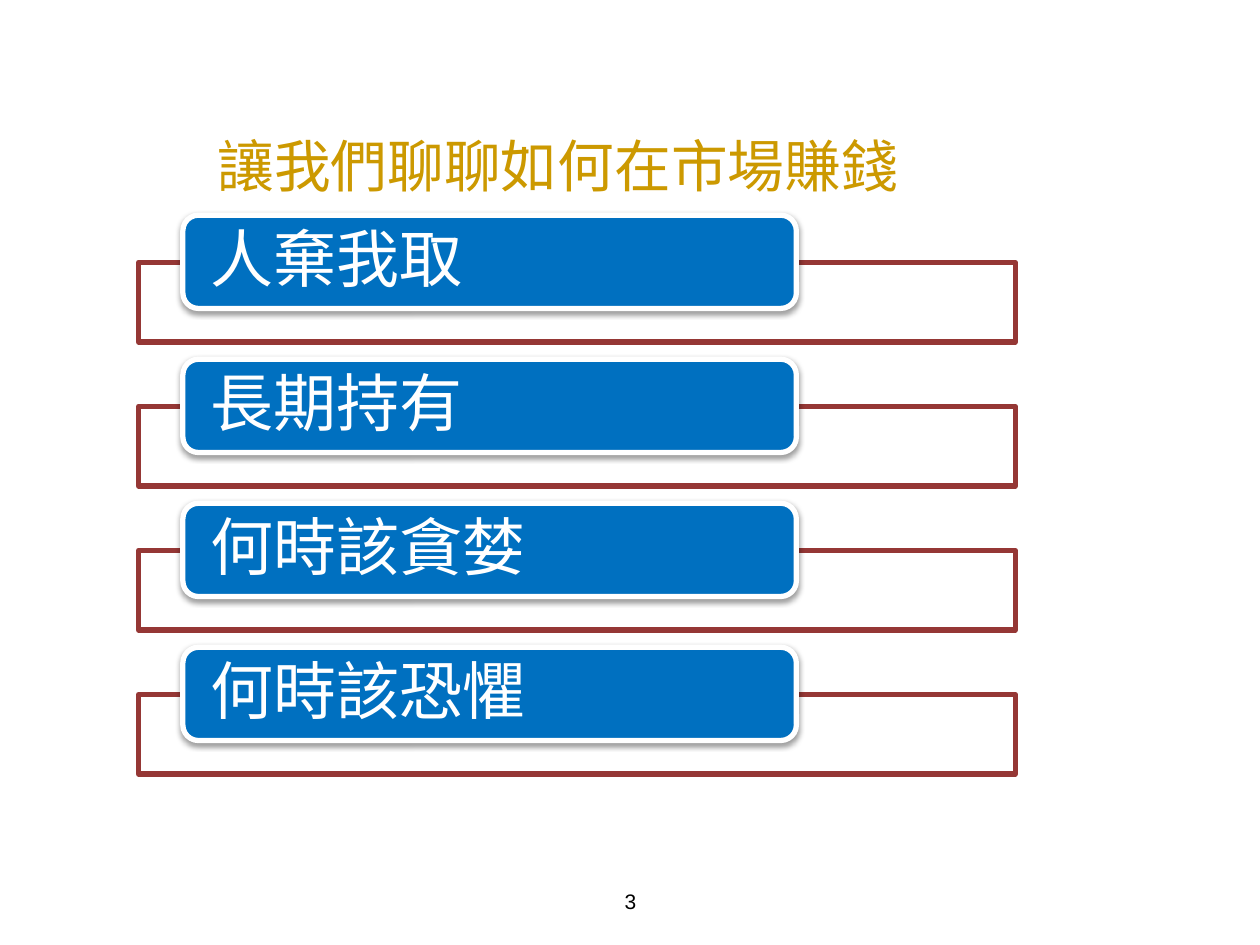
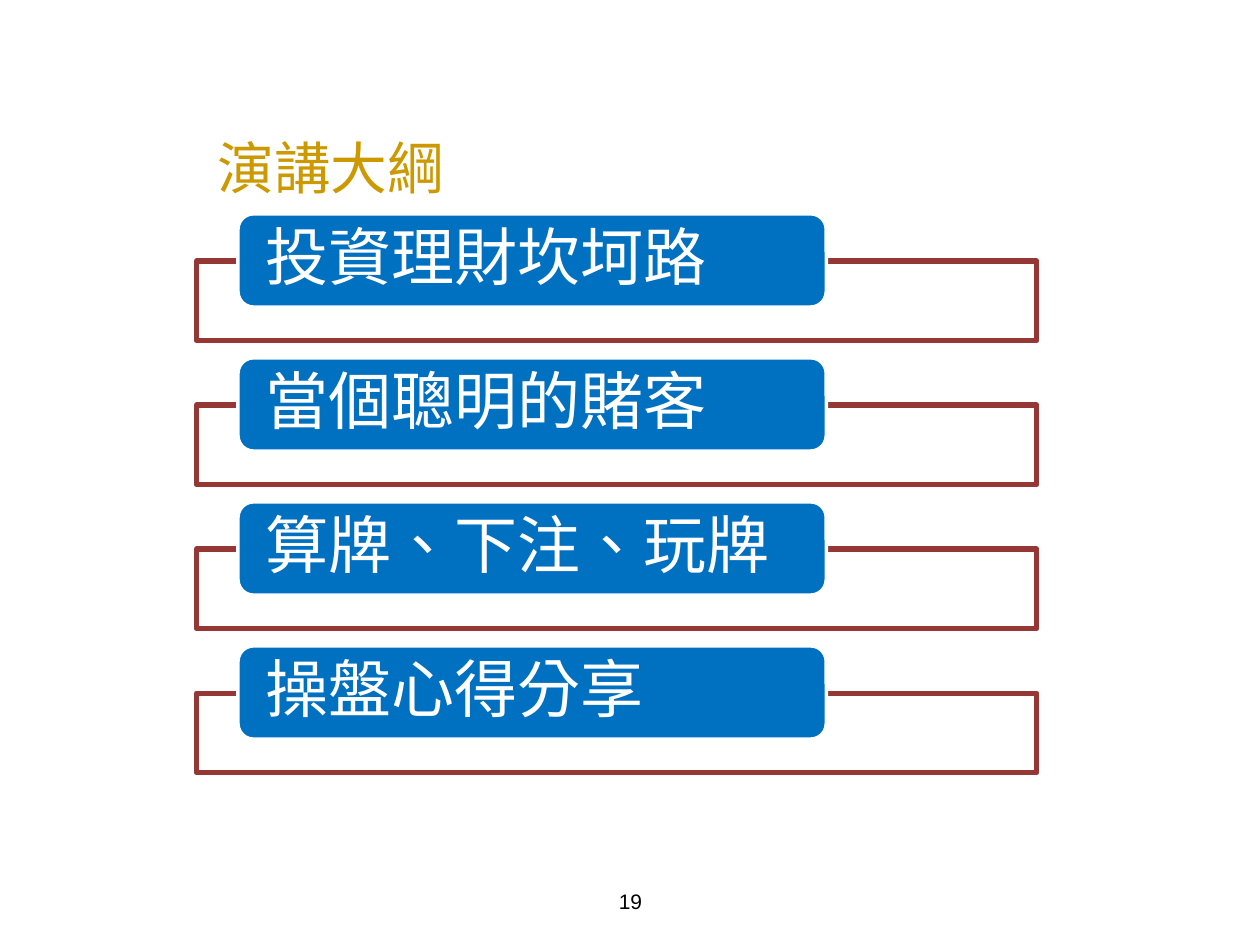
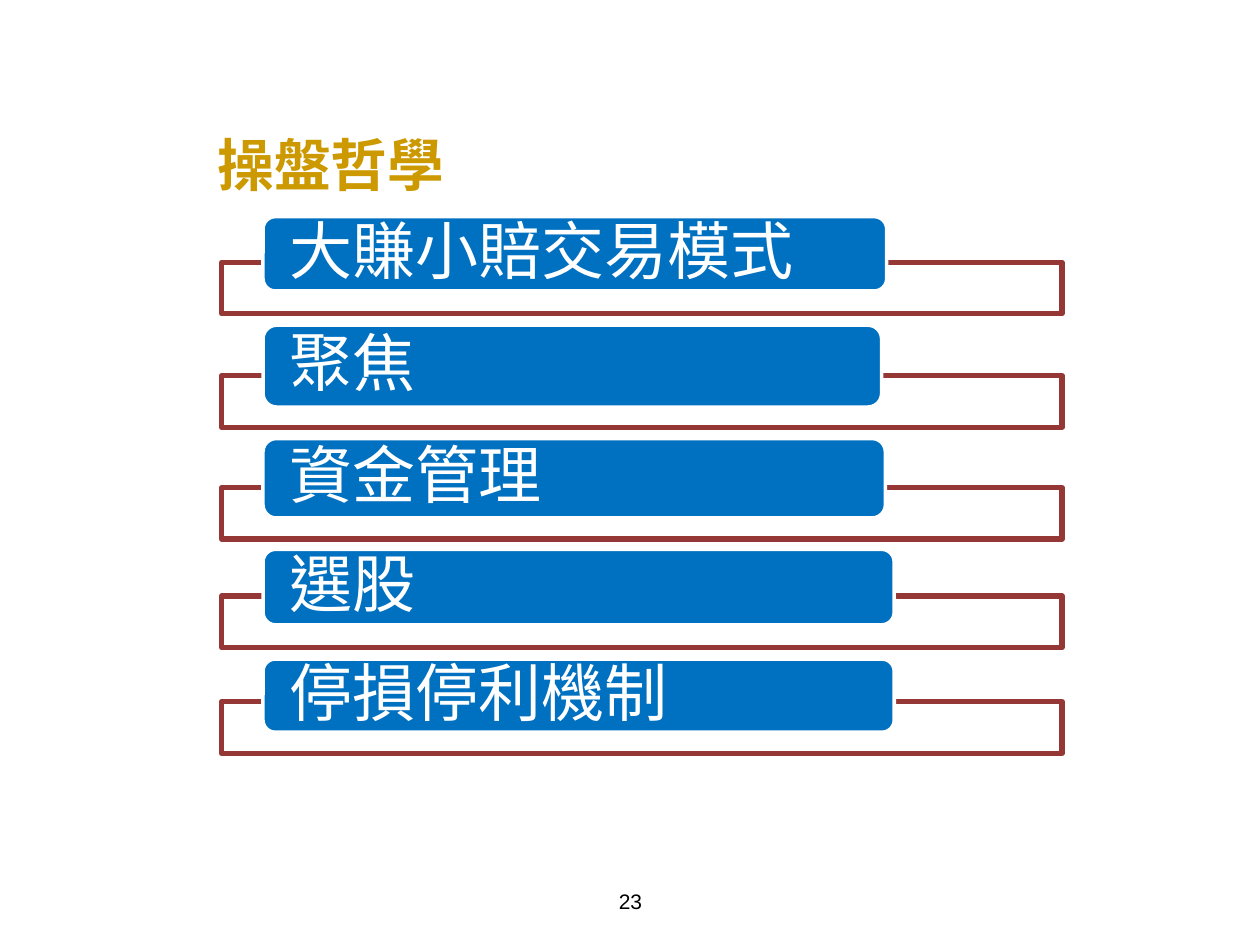
from pptx import Presentation
from pptx.dml.color import RGBColor
from pptx.enum.shapes import MSO_SHAPE
from pptx.enum.text import MSO_ANCHOR, PP_ALIGN
from pptx.oxml import parse_xml
from pptx.oxml.ns import nsdecls, qn
from pptx.util import Pt

# Shared look
GOLD, BLUE, RED, WHITE, BLACK = "CC9900", "0070C0", "953735", "FFFFFF", "000000"
CHINESE_FONT = "Noto Sans CJK SC"


def write(box, text, size, color, font=CHINESE_FONT, bold=False,
          align=PP_ALIGN.LEFT, spacing=1.0, inset=(7.2, 3.6)):
    frame = box.text_frame
    frame.word_wrap = True
    frame.vertical_anchor = MSO_ANCHOR.MIDDLE
    frame.margin_left = frame.margin_right = Pt(inset[0])
    frame.margin_top = frame.margin_bottom = Pt(inset[1])
    para = frame.paragraphs[0]
    para.alignment = align
    para.line_spacing = spacing
    span = para.add_run()
    span.text = text
    span.font.name = font
    span.font.size = Pt(size)
    span.font.bold = bold
    span.font.color.rgb = RGBColor.from_string(color)
    properties = span.font._element
    properties.set("lang", "zh-TW")
    properties.append(parse_xml(f'<a:ea {nsdecls("a")} typeface="{font}"/>'))


def add_box(page, kind, left, top, width, height, fill, line, line_width):
    box = page.shapes.add_shape(kind, Pt(left), Pt(top), Pt(width), Pt(height))
    box.shadow.inherit = False
    box.fill.solid()
    box.fill.fore_color.rgb = RGBColor.from_string(fill)
    box.line.color.rgb = RGBColor.from_string(line)
    box.line.width = Pt(line_width)
    return box


def even_rows(first_top, pill_width, *texts):
    # Text, frame top, pill top, pill width, pill height
    return [(text, first_top + 82.3 * n, first_top + 82.3 * n - 27, pill_width, 53.3)
            for n, text in enumerate(texts)]


pages = [
    dict(title="讓我們聊聊如何在市場賺錢", title_top=73.4, bold=False, number="3",
         left=79.2, width=501, height=45.4, pill_left=104.5, border=3, shadow=True,
         rows=even_rows(150, 350.6, "人棄我取", "長期持有", "何時該貪婪", "何時該恐懼")),
    dict(title="演講大綱", title_top=74.2, bold=False, number="19",
         left=112.3, width=480.2, height=45.4, pill_left=136, border=2, shadow=False,
         rows=even_rows(149.2, 336.2, "投資理財坎坷路", "當個聰明的賭客",
                        "算牌、下注、玩牌", "操盤心得分享")),
    dict(title="操盤哲學", title_top=72.7, bold=True, number="23",
         left=126.7, width=480.2, height=29.5, pill_left=150.3, border=2, shadow=False,
         rows=[("大賺小賠交易模式", 149.8, 123.8, 356.4, 42.5),
               ("聚焦", 214.6, 185.8, 353.5, 46.8),
               ("資金管理", 278.6, 250.6, 355.7, 45.4),
               ("選股", 340.6, 313.9, 360.7, 43.2),
               ("停損停利機制", 401, 376.6, 360.7, 41.8)]),
]

deck = Presentation()
deck.slide_width, deck.slide_height = Pt(720), Pt(540)

for content in pages:
    page = deck.slides.add_slide(deck.slide_layouts[6])

    # Title and page number
    title = page.shapes.add_textbox(Pt(117.2), Pt(content["title_top"]), Pt(450.7), Pt(41.8))
    write(title, content["title"], 32.4, GOLD, bold=content["bold"])
    number = page.shapes.add_textbox(Pt(246.2), Pt(500.4), Pt(228.2), Pt(28.8))
    write(number, content["number"], 12, BLACK, font="Arial", align=PP_ALIGN.CENTER)

    # Outlined frames, each with a blue pill over its top edge
    for text, frame_top, pill_top, pill_width, pill_height in content["rows"]:
        outline = add_box(page, MSO_SHAPE.RECTANGLE, content["left"], frame_top,
                          content["width"], content["height"], WHITE, RED, 3)
        fill_color = outline._element.spPr.find(qn("a:solidFill")).find(qn("a:srgbClr"))
        fill_color.append(parse_xml(f'<a:alpha {nsdecls("a")} val="90000"/>'))

        pill = add_box(page, MSO_SHAPE.ROUNDED_RECTANGLE, content["pill_left"], pill_top,
                       pill_width, pill_height, BLUE, WHITE, content["border"])
        write(pill, text, 36, WHITE, spacing=0.9, inset=(13, 0))
        if content["shadow"]:
            pill._element.spPr.find(qn("a:effectLst")).append(parse_xml(
                f'<a:outerShdw {nsdecls("a")} blurRad="{Pt(3.1)}" dist="{Pt(1.6)}" '
                f'dir="5400000" rotWithShape="0"><a:srgbClr val="{BLACK}">'
                '<a:alpha val="38000"/></a:srgbClr></a:outerShdw>'))

deck.save("out.pptx")
